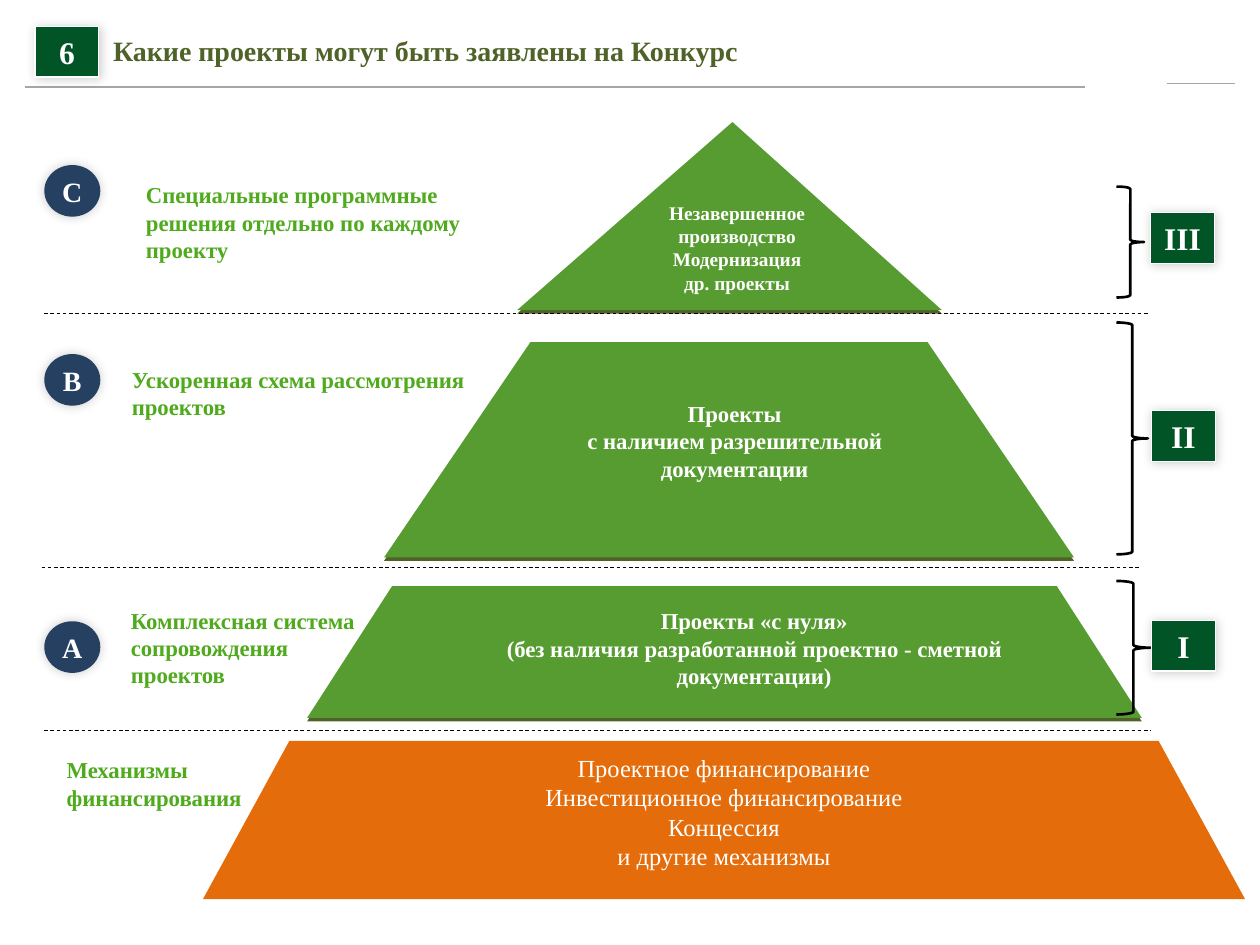
from dataclasses import dataclass
from typing import NamedTuple

from lxml import etree
from pptx import Presentation
from pptx.dml.color import RGBColor
from pptx.enum import dml, shapes, text
from pptx.oxml import ns
from pptx.util import Pt


@dataclass(frozen=True)
class Theme:
    font: str = "Times New Roman"
    title: str = "4F6228"
    tier: str = "579C30"
    tier_base: str = "4F6228"
    funding: str = "E46C0A"
    circle: str = "254061"
    badge: str = "005426"
    label: str = "50AA1E"
    rule: str = "A6A6A6"
    black: str = "000000"
    white: str = "FFFFFF"
    title_size: float = 16
    badge_size: float = 18
    letter_size: float = 16
    body_size: float = 13
    peak_size: float = 11
    funding_size: float = 14


class Box(NamedTuple):
    left: float
    top: float
    width: float
    height: float


class Tier(NamedTuple):
    preset: shapes.MSO_SHAPE
    box: Box
    adjustment: float


class Caption(NamedTuple):
    box: Box
    lines: list[str]
    size: float
    color: str
    align: text.PP_ALIGN


class Rule(NamedTuple):
    left: float
    right: float
    y: float
    color: str
    width: float
    dashed: bool


class Stage(NamedTuple):
    letter: str
    letter_top: float
    numeral: str
    numeral_left: float
    numeral_top: float
    brace: Box


THEME = Theme()
PRESET = shapes.MSO_SHAPE
LEFT, CENTER = text.PP_ALIGN.LEFT, text.PP_ALIGN.CENTER
BASE_DEPTH = 2

TIERS = [
    Tier(PRESET.ISOSCELES_TRIANGLE, Box(295.5, 69.75, 242.75, 107.5), 0.507),
    Tier(PRESET.TRAPEZOID, Box(219.5, 195.5, 394.25, 123), 0.68),
    Tier(PRESET.TRAPEZOID, Box(175.5, 335, 477, 75.25), 0.645),
]
RULES = [
    Rule(14.4, 620, 49.7, THEME.rule, 1, False),
    Rule(666.7, 705.6, 47.7, THEME.rule, 1, False),
    Rule(25.2, 656, 179.2, THEME.black, 0.5, True),
    Rule(23.8, 651.6, 324, THEME.black, 0.5, True),
    Rule(25.2, 658, 417.4, THEME.black, 0.5, True),
]
STAGES = [
    Stage("A", 355, "I", 658, 354.4, Box(638, 332, 19.4, 76.3)),
    Stage("B", 202.3, "II", 658, 234.7, Box(638, 184.3, 18, 132.5)),
    Stage("C", 94.3, "III", 657.4, 121.5, Box(638, 106.6, 15.8, 63.4)),
]
CAPTIONS = [
    Caption(Box(76.3, 100, 210.2, 54.7),
            ["Специальные программные решения отдельно по каждому проекту"],
            THEME.body_size, THEME.label, LEFT),
    Caption(Box(68.2, 205.2, 210.2, 38.9), ["Ускоренная схема рассмотрения проектов"],
            THEME.body_size, THEME.label, LEFT),
    Caption(Box(67.7, 343, 210.2, 54.7), ["Комплексная система", "сопровождения", "проектов"],
            THEME.body_size, THEME.label, LEFT),
    Caption(Box(31, 428.6, 210.2, 38.9), ["Механизмы", "финансирования"],
            THEME.body_size, THEME.label, LEFT),
    Caption(Box(365.8, 111.6, 110.9, 60.5),
            ["Незавершенное", "производство", "Модернизация", "др. проекты"],
            THEME.peak_size, THEME.white, CENTER),
    Caption(Box(292.3, 224.9, 254.9, 70.6),
            ["Проекты", "с наличием разрешительной документации"],
            THEME.body_size, THEME.white, CENTER),
    Caption(Box(280.8, 343.4, 300.2, 54.7),
            ["Проекты «с нуля»", "(без наличия разработанной проектно - сметной документации)"],
            THEME.body_size, THEME.white, CENTER),
]


def rgb(color: str) -> RGBColor:
    return RGBColor.from_string(color)


def write(frame, lines: list[str], size: float, color: str, align=CENTER, bold=True) -> None:
    frame.text = "\n".join(lines)
    for paragraph in frame.paragraphs:
        paragraph.alignment = align
        font = paragraph.font
        font.name, font.size, font.bold = THEME.font, Pt(size), bold
        font.color.rgb = rgb(color)


def add_shape(slide, preset, box: Box, fill=None, line=None, line_width=0.75, adjustment=None):
    shape = slide.shapes.add_shape(preset, *map(Pt, box))
    shape.shadow.inherit = False
    if fill:
        shape.fill.solid()
        shape.fill.fore_color.rgb = rgb(fill)
    else:
        shape.fill.background()
    if line:
        shape.line.color.rgb = rgb(line)
        shape.line.width = Pt(line_width)
    else:
        shape.line.fill.background()
    if adjustment is not None:
        shape.adjustments[0] = adjustment
    return shape


def add_shadow(shape, distance: float, degrees: int) -> None:
    effects = shape._element.spPr.find(ns.qn("a:effectLst"))
    shadow = etree.SubElement(effects, ns.qn("a:outerShdw"), blurRad=str(Pt(6)),
                              dist=str(Pt(distance)), dir=str(degrees * 60000),
                              algn="ctr", rotWithShape="0")
    color = etree.SubElement(shadow, ns.qn("a:srgbClr"), val=THEME.black)
    etree.SubElement(color, ns.qn("a:alpha"), val="20000")


def add_marker(slide, preset, box: Box, word: str, fill: str, size: float, line=None):
    marker = add_shape(slide, preset, box, fill, line)
    frame = marker.text_frame
    frame.word_wrap = False
    frame.vertical_anchor = text.MSO_ANCHOR.MIDDLE
    write(frame, [word], size, THEME.white)
    return marker


def add_badge(slide, left: float, top: float, word: str) -> None:
    badge = add_marker(slide, PRESET.RECTANGLE, Box(left, top, 36.5, 29), word,
                       THEME.badge, THEME.badge_size, THEME.white)
    add_shadow(badge, 1, 45)


def add_stage(slide, stage: Stage) -> None:
    circle = add_marker(slide, PRESET.OVAL, Box(25.3, stage.letter_top, 32, 29.5),
                        stage.letter, THEME.circle, THEME.letter_size)
    add_shadow(circle, 0, 315)
    add_shape(slide, PRESET.RIGHT_BRACE, stage.brace, line=THEME.black, line_width=1.5)
    add_badge(slide, stage.numeral_left, stage.numeral_top, stage.numeral)


def add_tier(slide, tier: Tier) -> None:
    base = tier.box._replace(top=tier.box.top + BASE_DEPTH)
    for box, fill in ((base, THEME.tier_base), (tier.box, THEME.tier)):
        add_shape(slide, tier.preset, box, fill, adjustment=tier.adjustment)


def add_rule(slide, rule: Rule) -> None:
    line = slide.shapes.add_connector(shapes.MSO_CONNECTOR.STRAIGHT, Pt(rule.left), Pt(rule.y),
                                      Pt(rule.right), Pt(rule.y))
    line.line.color.rgb = rgb(rule.color)
    line.line.width = Pt(rule.width)
    if rule.dashed:
        line.line.dash_style = dml.MSO_LINE.DASH
    etree.SubElement(line._element.spPr, ns.qn("a:effectLst"))


def add_caption(slide, caption: Caption) -> None:
    frame = slide.shapes.add_textbox(*map(Pt, caption.box)).text_frame
    frame.word_wrap = True
    write(frame, caption.lines, caption.size, caption.color, caption.align)


def add_title(slide) -> None:
    title = slide.shapes.title
    title.left, title.top, title.width, title.height = map(Pt, Box(13, 8, 598.3, 41.8))
    frame = title.text_frame
    frame.margin_left = Pt(51.6)
    frame.margin_right = frame.margin_top = frame.margin_bottom = 0
    frame.vertical_anchor = text.MSO_ANCHOR.MIDDLE
    write(frame, ["Какие проекты могут быть заявлены на Конкурс"],
          THEME.title_size, THEME.title, LEFT)


def add_funding(slide) -> None:
    funding = add_shape(slide, PRESET.TRAPEZOID, Box(116, 423.3, 595.5, 90.5),
                        THEME.funding, adjustment=0.546)
    frame = funding.text_frame
    frame.word_wrap = False
    frame.vertical_anchor = text.MSO_ANCHOR.MIDDLE
    frame.margin_bottom = Pt(18)
    write(frame, ["Проектное финансирование", "Инвестиционное финансирование",
                  "Концессия", "и другие механизмы"],
          THEME.funding_size, THEME.white, bold=False)


def main() -> None:
    deck = Presentation()
    deck.slide_width, deck.slide_height = Pt(720), Pt(540)
    slide = deck.slides.add_slide(deck.slide_layouts[5])
    add_title(slide)
    for draw, items in ((add_tier, TIERS), (add_rule, RULES),
                        (add_stage, STAGES), (add_caption, CAPTIONS)):
        for item in items:
            draw(slide, item)
    add_funding(slide)
    add_badge(slide, 20, 15, "6")
    deck.save("out.pptx")


if __name__ == "__main__":
    main()
